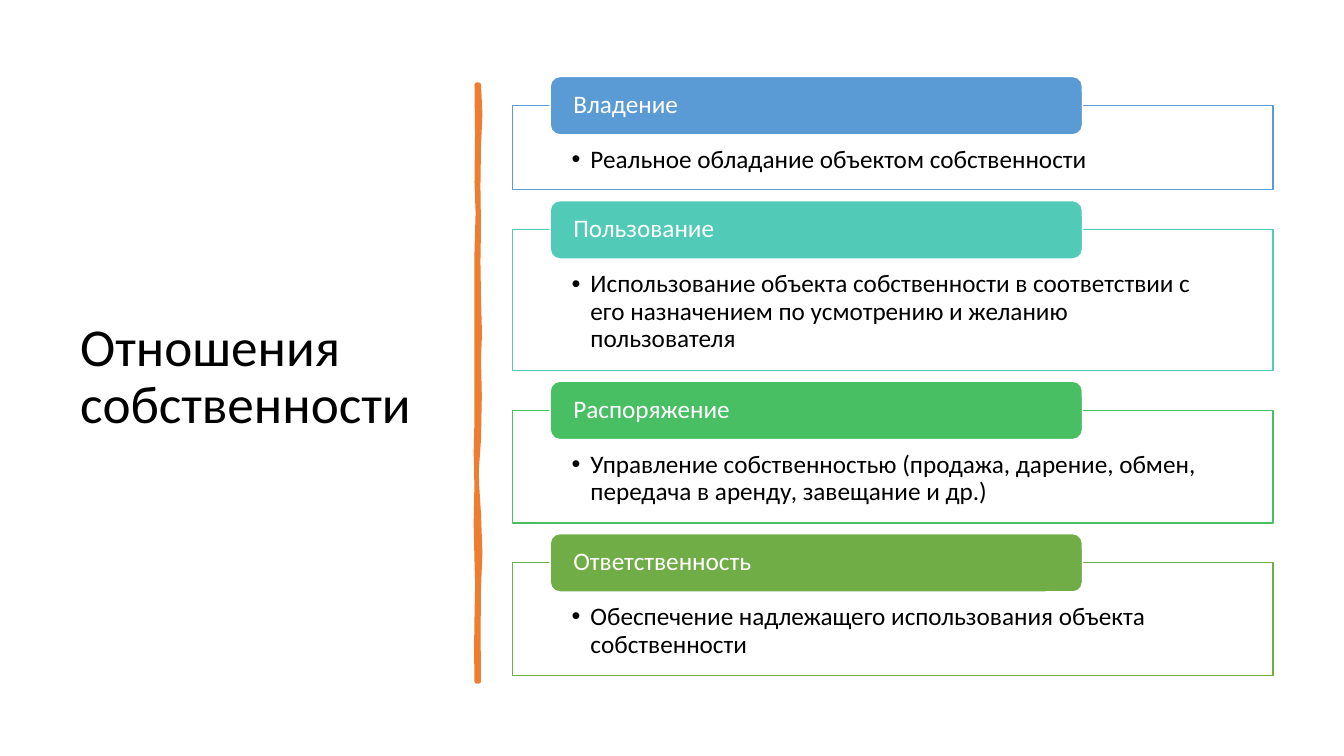
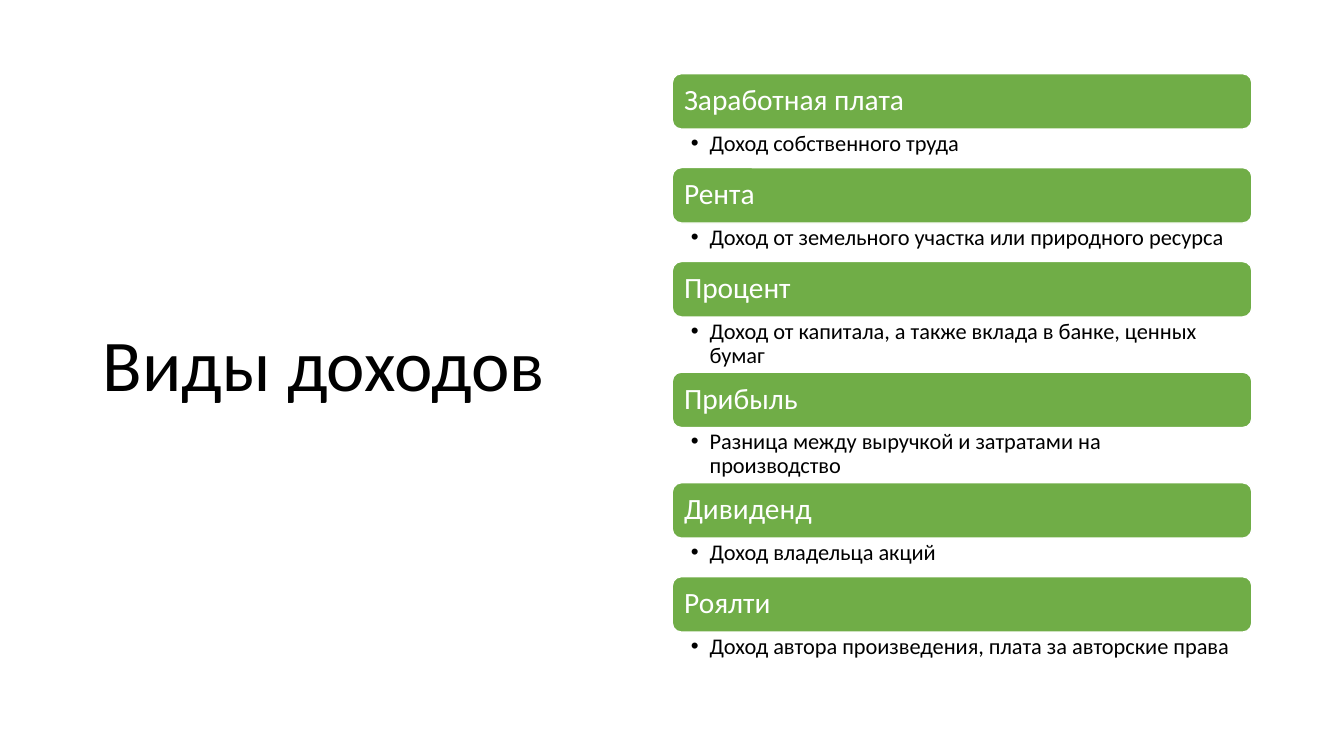
from lxml.etree import SubElement
from pptx import Presentation
from pptx.dml.color import RGBColor
from pptx.enum.shapes import MSO_SHAPE as Preset
from pptx.enum.text import MSO_ANCHOR as Anchor, MSO_AUTO_SIZE as AutoSize, PP_ALIGN as Align
from pptx.oxml.ns import qn
from pptx.util import Pt

# Shared look
COLORS = {
    "paper": "FFFFFF", "ink": "000000", "brush": "ED7D31",
    "blue": "5B9BD5", "teal": "52CAB8", "emerald": "49BF64", "green": "70AD47",
}
FONT = "Calibri"
LINE_SPACING = 0.9
BULLET_INDENT = 13.5

# Content: heading, colour, detail, number of text lines
OWNERSHIP_TITLE = "Отношения собственности"
OWNERSHIP = [
    ("Владение", "blue", "Реальное обладание объектом собственности", 1),
    ("Пользование", "teal", "Использование объекта собственности в соответствии с "
     "его назначением по усмотрению и желанию пользователя", 3),
    ("Распоряжение", "emerald", "Управление собственностью (продажа, дарение, обмен, "
     "передача в аренду, завещание и др.)", 2),
    ("Ответственность", "green",
     "Обеспечение надлежащего использования объекта собственности", 2),
]
INCOME_TITLE = "Виды доходов"
INCOME = [
    ("Заработная плата", "Доход собственного труда", 1),
    ("Рента", "Доход от земельного участка или природного ресурса", 1),
    ("Процент", "Доход от капитала, а также вклада в банке, ценных бумаг", 2),
    ("Прибыль", "Разница между выручкой и затратами на производство", 2),
    ("Дивиденд", "Доход владельца акций", 1),
    ("Роялти", "Доход автора произведения, плата за авторские права", 1),
]

# Brush stroke outline: right edge downwards, then left edge upwards
STROKE = [
    (342, 60.5), (343, 81), (342, 105), (341.6, 133), (342, 163), (341.6, 187),
    (342, 212), (342.7, 239), (342, 256), (342.6, 283), (342, 314), (340.2, 339),
    (342, 367), (343, 395), (342, 420), (341.7, 452), (342, 486.7),
    (340.6, 486.7), (340.3, 464), (340.6, 441), (341.1, 417), (340.6, 401),
    (340, 374), (340.6, 343), (340, 324), (340.6, 299), (340.6, 272), (340.6, 241),
    (340.6, 209), (340.6, 180), (341.4, 152), (340.6, 130), (341, 96), (340.6, 60.5),
]


def rgb(color):
    return RGBColor.from_string(COLORS[color])


def set_all(target, values):
    for name, value in values.items():
        setattr(target, name, value)


def write(shape, text, size, color, anchor, insets, bullet=False):
    """Put one formatted paragraph in a shape."""
    sides = ("margin_left", "margin_top", "margin_right", "margin_bottom")
    frame = shape.text_frame
    set_all(frame, {"text": text, "word_wrap": True, "auto_size": AutoSize.NONE,
                    "vertical_anchor": anchor,
                    **{side: Pt(inset) for side, inset in zip(sides, insets)}})
    paragraph = frame.paragraphs[0]
    set_all(paragraph, {"alignment": Align.LEFT, "line_spacing": LINE_SPACING,
                        "level": int(bullet)})
    font = paragraph.runs[0].font
    set_all(font, {"name": FONT, "size": Pt(size)})
    font.color.rgb = rgb(color)
    if bullet:
        properties = paragraph._p.get_or_add_pPr()
        properties.set("marL", str(Pt(BULLET_INDENT)))
        properties.set("indent", str(-Pt(BULLET_INDENT)))
        SubElement(properties, qn("a:buFont")).set("typeface", "Arial")
        SubElement(properties, qn("a:buChar")).set("char", "•")


def paint(shape, fill, line, width=1, opacity=None):
    shape.shadow.inherit = False
    shape.fill.solid()
    shape.fill.fore_color.rgb = rgb(fill)
    shape.line.color.rgb = rgb(line)
    shape.line.width = Pt(width)
    if opacity is not None:
        color = shape._element.spPr.find(qn("a:solidFill"))[0]
        SubElement(color, qn("a:alpha")).set("val", str(opacity * 1000))


def add_titled_slide(deck, text, size, box):
    slide = deck.slides.add_slide(deck.slide_layouts[5])
    title = slide.shapes.title
    set_all(title, dict(zip(("left", "top", "width", "height"), map(Pt, box))))
    write(title, text, size, "ink", Anchor.MIDDLE, (7.2, 3.6, 7.2, 3.6))
    return slide


def add_heading(slide, text, box, color, size, inset):
    heading = slide.shapes.add_shape(Preset.ROUNDED_RECTANGLE, *map(Pt, box))
    paint(heading, color, "paper")
    write(heading, text, size, "paper", Anchor.MIDDLE, (inset, 0, inset, 0))


def add_brush_stroke(slide):
    start, *points = [(Pt(x), Pt(y)) for x, y in STROKE]
    outline = slide.shapes.build_freeform(*start, scale=1.0)
    outline.add_line_segments(points, close=True)
    paint(outline.convert_to_shape(), "brush", "brush", 3.25)


def build_ownership(deck):
    slide = add_titled_slide(deck, OWNERSHIP_TITLE, 38, (50, 49.8, 269.3, 440))
    add_brush_stroke(slide)
    top, overlap, gap = 54.6, 20.8, 7.7
    for heading, color, detail, lines in OWNERSHIP:
        frame_top = top + overlap
        frame_height = 60.2 + 20.15 * (lines - 1)
        frame = slide.shapes.add_shape(
            Preset.RECTANGLE, *map(Pt, (366.1, frame_top, 543.3, frame_height)))
        paint(frame, "paper", color, opacity=90)
        write(frame, detail, 18, "ink", Anchor.TOP, (42.2, 29.6, 42.2, 10), bullet=True)
        add_heading(slide, heading, (393, top, 380.2, 41.7), color, 18, 14.5)
        top = frame_top + frame_height + gap


def build_income(deck):
    slide = add_titled_slide(deck, INCOME_TITLE, 52, (66.2, 43.5, 383, 438.5))
    left, width, top, heading_height = 480.2, 414, 52.6, 39.6
    for heading, detail, lines in INCOME:
        add_heading(slide, heading, (left, top, width, heading_height), "green", 21, 6.5)
        detail_top = top + heading_height
        detail_height = 27.5 + 11.9 * (lines - 1)
        box = slide.shapes.add_textbox(*map(Pt, (left, detail_top, width, detail_height)))
        write(box, detail, 16, "ink", Anchor.TOP, (13.2, 2, 11.5, 2), bullet=True)
        top = detail_top + detail_height


def main():
    deck = Presentation()
    set_all(deck, {"slide_width": Pt(960), "slide_height": Pt(540)})
    build_ownership(deck)
    build_income(deck)
    deck.save("out.pptx")


if __name__ == "__main__":
    main()
